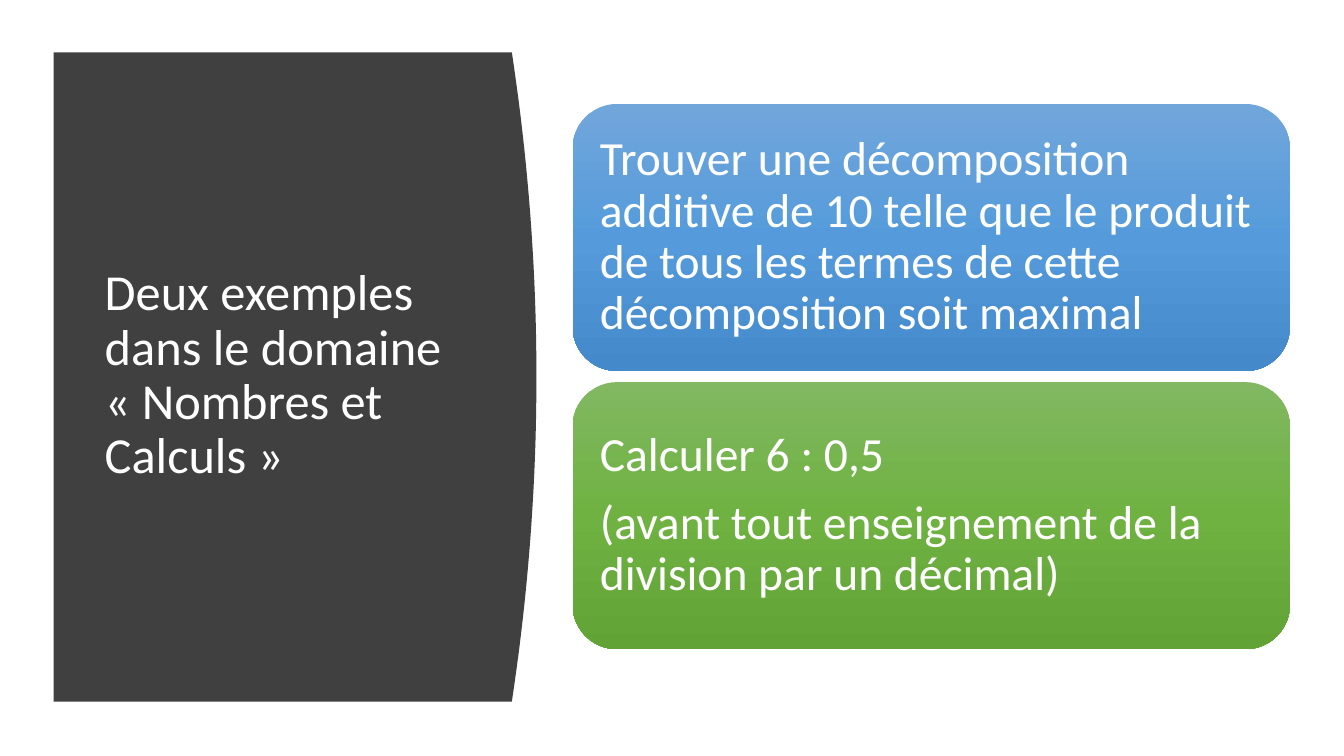
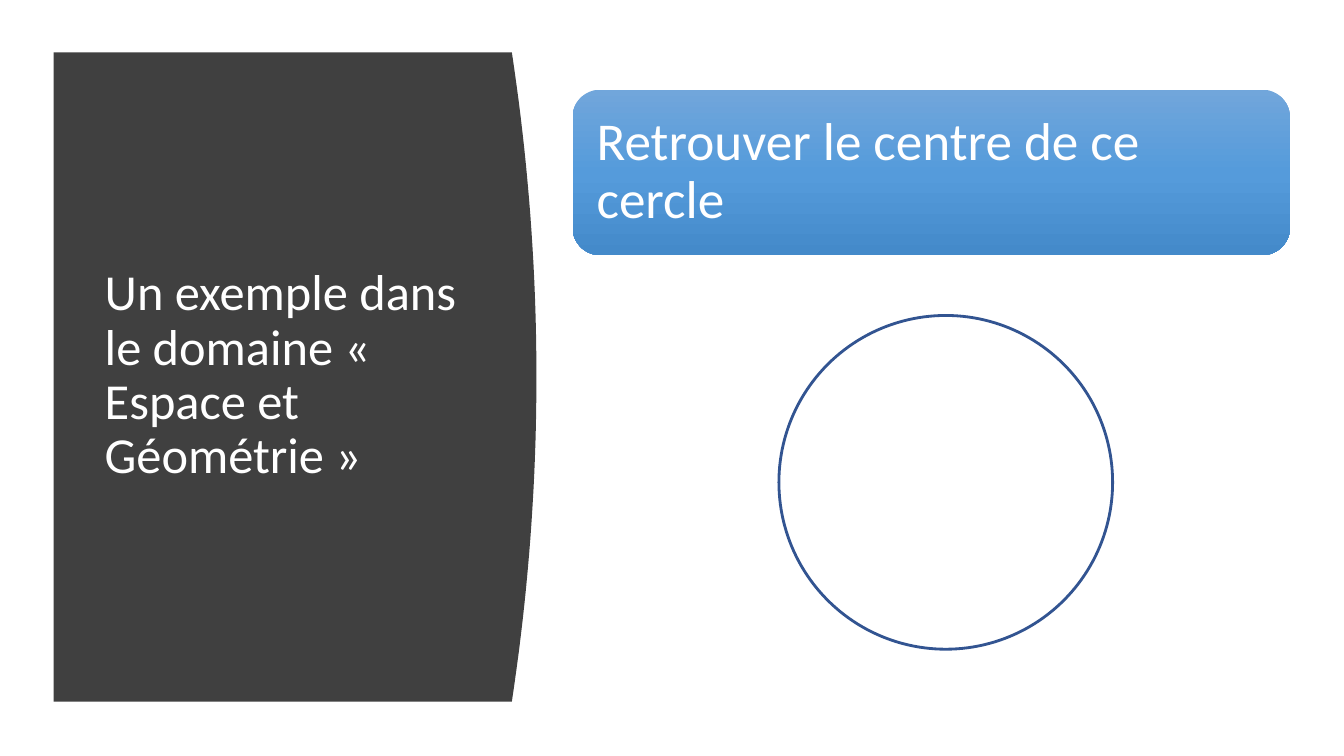
from copy import deepcopy

from pptx import Presentation
from pptx.dml.color import RGBColor
from pptx.enum import shapes, text
from pptx.oxml.ns import qn
from pptx.util import Cm, Pt

# Content
SLIDES = [
    {
        "title": "Deux exemples dans le domaine « Nombres et Calculs »",
        "cards": [
            ["Trouver une décomposition additive de 10 telle que le produit "
             "de tous les termes de cette décomposition soit maximal"],
            ["Calculer 6 : 0,5",
             "(avant tout enseignement de la division par un décimal)"],
        ],
        "card_top": 2.62, "card_height": 6.73, "card_size": 34,
        "circle": None,
    },
    {
        "title": "Un exemple dans le domaine « Espace et Géométrie »",
        "cards": [["Retrouver le centre de ce cercle"]],
        "card_top": 2.26, "card_height": 4.17, "card_size": 38,
        "circle": (19.63, 7.95, 8.41),  # left, top, diameter
    },
]

# Shared style
FONT = "Calibri"
WHITE = RGBColor(0xFF, 0xFF, 0xFF)
PANEL_GREY = RGBColor(0x40, 0x40, 0x40)
CIRCLE_BLUE = RGBColor(0x32, 0x54, 0x91)
BLUE = [RGBColor(0x71, 0xA6, 0xDB), RGBColor(0x55, 0x9B, 0xDB), RGBColor(0x44, 0x8A, 0xCA)]
GREEN = [RGBColor(0x81, 0xB8, 0x61), RGBColor(0x6F, 0xB2, 0x42), RGBColor(0x62, 0xA3, 0x36)]
CARD_GRADIENTS = [BLUE, GREEN]

# Shared layout, in cm
PANEL_LEFT, PANEL_TOP, PANEL_WIDTH, PANEL_HEIGHT = 1.35, 1.32, 11.55, 16.36
PANEL_BULGE = 0.62
CURVE_STEPS = 40
TITLE_BOX = (2.39, 2.82, 9.5, 13.31)
CARD_LEFT, CARD_WIDTH, CARD_GAP = 14.43, 18.08, 0.28


def write(shape, paragraphs, *, size, color=WHITE, space_after=0, inset=None):
    """Fill a shape with left-aligned, vertically centred paragraphs."""
    frame = shape.text_frame
    frame.word_wrap = True
    frame.vertical_anchor = text.MSO_ANCHOR.MIDDLE
    if inset is not None:
        frame.margin_left = frame.margin_right = inset
        frame.margin_top = frame.margin_bottom = inset
    for i, words in enumerate(paragraphs):
        paragraph = frame.paragraphs[0] if i == 0 else frame.add_paragraph()
        paragraph.alignment = text.PP_ALIGN.LEFT
        paragraph.line_spacing = 0.9
        paragraph.space_after = Pt(space_after)
        run = paragraph.add_run()
        run.text = words
        run.font.name, run.font.size = FONT, Pt(size)
        run.font.color.rgb = color


def fill_gradient(shape, colors):
    """Vertical gradient with evenly spaced stops."""
    shape.fill.gradient()
    shape.fill.gradient_angle = 270
    stop_list = shape.element.spPr.find(".//" + qn("a:gsLst"))
    while len(stop_list) < len(colors):
        stop_list.insert(1, deepcopy(stop_list[0]))
    for i, (stop, color) in enumerate(zip(shape.fill.gradient_stops, colors)):
        stop.color.rgb = color
        stop.position = i / (len(colors) - 1)


def add_panel(slide, title):
    """Dark panel whose right edge bulges outwards, with the title on it."""
    right, bottom = PANEL_LEFT + PANEL_WIDTH, PANEL_TOP + PANEL_HEIGHT
    edge = []
    for step in range(CURVE_STEPS + 1):
        t = step / CURVE_STEPS
        edge.append((Cm(right + PANEL_BULGE * 4 * t * (1 - t)),
                     Cm(PANEL_TOP + PANEL_HEIGHT * t)))
    outline = slide.shapes.build_freeform(Cm(PANEL_LEFT), Cm(PANEL_TOP))
    outline.add_line_segments(edge + [(Cm(PANEL_LEFT), Cm(bottom))], close=True)
    panel = outline.convert_to_shape()
    panel.shadow.inherit = False
    panel.fill.solid()
    panel.fill.fore_color.rgb = PANEL_GREY
    panel.line.fill.background()

    title_box = slide.shapes.add_textbox(*map(Cm, TITLE_BOX))
    write(title_box, [title], size=36)


def add_cards(slide, cards, top, height, size):
    for i, (paragraphs, gradient) in enumerate(zip(cards, CARD_GRADIENTS)):
        card = slide.shapes.add_shape(
            shapes.MSO_SHAPE.ROUNDED_RECTANGLE, Cm(CARD_LEFT),
            Cm(top + i * (height + CARD_GAP)), Cm(CARD_WIDTH), Cm(height))
        card.shadow.inherit = False
        fill_gradient(card, gradient)
        card.line.fill.background()
        write(card, paragraphs, size=size, space_after=round(size * 0.35),
              inset=Pt(size * 0.3))


def add_circle(slide, left, top, diameter):
    circle = slide.shapes.add_shape(
        shapes.MSO_SHAPE.OVAL, Cm(left), Cm(top), Cm(diameter), Cm(diameter))
    circle.shadow.inherit = False
    circle.fill.background()
    circle.line.color.rgb = CIRCLE_BLUE
    circle.line.width = Pt(2)


def main():
    deck = Presentation()
    deck.slide_width, deck.slide_height = Cm(33.87), Cm(19.05)
    for content in SLIDES:
        slide = deck.slides.add_slide(deck.slide_layouts[6])
        add_panel(slide, content["title"])
        add_cards(slide, content["cards"], content["card_top"],
                  content["card_height"], content["card_size"])
        if content["circle"]:
            add_circle(slide, *content["circle"])
    deck.save("out.pptx")


if __name__ == "__main__":
    main()
